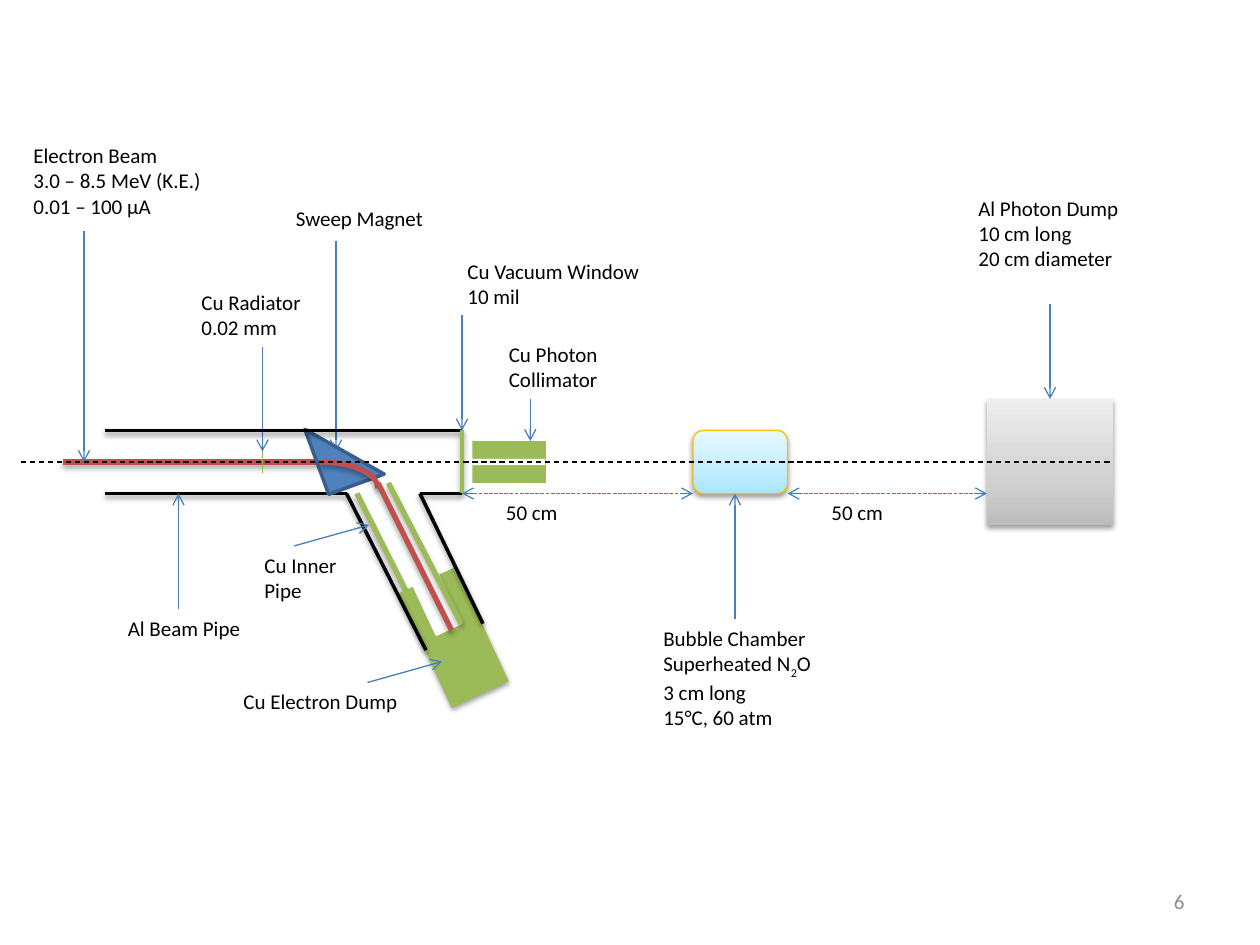
import pptx
import pptx.util
import pptx.dml.color
import pptx.enum.dml
import pptx.enum.shapes
import pptx.enum.text
import pptx.oxml
import pptx.oxml.ns
from lxml import etree

Pt = pptx.util.Pt
qn = pptx.oxml.ns.qn
SHAPES = pptx.enum.shapes.MSO_SHAPE
DASHES = pptx.enum.dml.MSO_LINE
ALIGN = pptx.enum.text.PP_ALIGN
COLORS = {
    "black": "000000", "white": "FFFFFF", "gray": "8C8C8C", "arrow": "4B7EBC",
    "copper": "9BBB59", "radiator": "98B955", "beam": "C0504D",
    "magnet": "4F81BD", "magnet_edge": "3A5F8C", "chamber_edge": "FFC000",
}
CHAMBER_STOPS = ((0, "A7E6FF"), (35, "C1EDFF"), (100, "E7F8FF"))
DUMP_STOPS = ((0, "BDBDBD"), (35, "D1D1D1"), (100, "EEEEEE"))
# Shadow opacity and distance for thick lines and for everything else
HEAVY, LIGHT = (35, 1.8), (38, 1.6)


def rgb(name):
    return pptx.dml.color.RGBColor.from_string(COLORS[name])


def set_shadow(shape, shadow):
    """Add an effect list, empty unless a downward shadow is asked for."""
    effects = etree.SubElement(shape._element.spPr, qn("a:effectLst"))
    if shadow:
        opacity, distance = shadow
        outer = etree.SubElement(
            effects, qn("a:outerShdw"), blurRad=str(Pt(3.1)),
            dist=str(Pt(distance)), dir="5400000", rotWithShape="0")
        color = etree.SubElement(outer, qn("a:srgbClr"), val=COLORS["black"])
        etree.SubElement(color, qn("a:alpha"), val=str(opacity * 1000))


def add_line(slide, box, start, end, color="black", width=2, dash=None,
             arrows=(), shadow=None):
    left, top = box[:2]
    line = slide.shapes.add_connector(
        pptx.enum.shapes.MSO_CONNECTOR.STRAIGHT,
        Pt(left + start[0]), Pt(top + start[1]),
        Pt(left + end[0]), Pt(top + end[1]))
    line.line.color.rgb = rgb(color)
    line.line.width = Pt(width)
    if dash:
        line.line.dash_style = dash
    for tag in arrows:
        etree.SubElement(line.line._get_or_add_ln(), qn(tag), type="arrow")
    set_shadow(line, shadow)


def add_pointer(slide, box, start, end):
    add_line(slide, box, start, end, "arrow", 0.75, arrows=["a:tailEnd"])


def add_part(slide, box, kind, area, fill=None, stops=None, edge=None,
             edge_width=0.75, rotation=0, shadow=None):
    x, y, width, height = area
    shape = slide.shapes.add_shape(
        kind, Pt(box[0] + x), Pt(box[1] + y), Pt(width), Pt(height))
    shape.rotation = rotation
    if stops:
        shape.fill.gradient()
        shape.fill.gradient_angle = 90
        stop_list = shape._element.spPr.find(".//" + qn("a:gsLst"))
        stop_list.clear()
        for position, color in stops:
            stop = etree.SubElement(stop_list, qn("a:gs"), pos=str(position * 1000))
            etree.SubElement(stop, qn("a:srgbClr"), val=color)
    elif fill:
        shape.fill.solid()
        shape.fill.fore_color.rgb = rgb(fill)
    else:
        shape.fill.background()
    if edge:
        shape.line.color.rgb = rgb(edge)
        shape.line.width = Pt(edge_width)
    else:
        shape.line.fill.background()
    set_shadow(shape, shadow)


def add_text(slide, box, area, text, color="black", size=12, wrap=False,
             align=ALIGN.LEFT, anchor=pptx.enum.text.MSO_ANCHOR.TOP):
    """Add one paragraph per line; text between tildes is subscript."""
    x, y, width, height = area
    shape = slide.shapes.add_textbox(
        Pt(box[0] + x), Pt(box[1] + y), Pt(width), Pt(height))
    frame = shape.text_frame
    frame.word_wrap = wrap
    frame.vertical_anchor = anchor
    for index, content in enumerate(text.split("\n")):
        paragraph = frame.add_paragraph() if index else frame.paragraphs[0]
        paragraph.alignment = align
        for part, words in enumerate(content.split("~")):
            run = paragraph.add_run()
            run.text = words
            run.font.name = "Calibri"
            run.font.size = Pt(size)
            run.font.color.rgb = rgb(color)
            if part % 2:
                run.font._element.set("baseline", "-25000")


def draw_bubble_chamber(slide, box):
    width, height = box[2:]
    add_part(slide, box, SHAPES.FLOWCHART_ALTERNATE_PROCESS, (0, 0, width, height),
             stops=CHAMBER_STOPS, edge="chamber_edge", shadow=LIGHT)
    add_pointer(slide, box, (24, 108), (24, height))
    add_text(slide, box, (-24, 108, 100, 65.5),
             "Bubble Chamber\nSuperheated N~2~O\n3 cm long\n15°C, 60 atm")


def draw_photon_dump(slide, box):
    width, height = box[2:]
    add_part(slide, box, SHAPES.RECTANGLE, (0, 0, width, height),
             stops=DUMP_STOPS, shadow=LIGHT)
    add_pointer(slide, box, (width / 2, -54), (width / 2, 0))
    add_text(slide, box, (-12, -120, 96, 51),
             "Al Photon Dump\n10 cm long\n20 cm diameter")


def draw_beam_pipe(slide, box):
    height = box[3]
    axis = height / 2
    # Lower wall, beam and radiator foil
    add_line(slide, box, (0, height), (138, height), shadow=LIGHT)
    add_line(slide, box, (-24, axis), (129, axis), "beam", 3, shadow=HEAVY)
    add_line(slide, box, (90, axis - 6), (90, axis + 6), "radiator", 0.75)
    # Labels
    add_pointer(slide, box, (-12, -114), (-12, axis))
    add_text(slide, box, (-48, -168, 111.6, 51),
             "Electron Beam\n3.0 – 8.5 MeV (K.E.)\n0.01 – 100 µA")
    add_pointer(slide, box, (90, -48), (90, axis - 6))
    add_text(slide, box, (48, -84, 74, 36), "Cu Radiator\n0.02 mm")
    add_pointer(slide, box, (42, 102), (42, height))
    add_text(slide, box, (6, 102, 79, 21.6), "Al Beam Pipe")


def draw_sweep_magnet(slide, box):
    width, height = box[2:]
    add_pointer(slide, box, (42, -126), (42, -6))
    add_text(slide, box, (12, -150, 88, 21.6), "Sweep Magnet")
    add_part(slide, box, SHAPES.RIGHT_TRIANGLE, (30, -25.7, 33.8, 39.6),
             fill="magnet", edge="magnet_edge", edge_width=2, rotation=-20.1)
    add_part(slide, box, SHAPES.ARC, (0, 0, width, height),
             edge="beam", edge_width=3, shadow=HEAVY)


def draw_pipe_exit(slide, box):
    width, height = box[2:]
    add_line(slide, box, (-180, 0), (width, 0), shadow=LIGHT)
    add_line(slide, box, (0, height), (width, height), shadow=LIGHT)
    add_line(slide, box, (width, 0), (width, height), "copper", shadow=LIGHT)
    add_pointer(slide, box, (width, -66), (width, 0))
    add_text(slide, box, (20, -102, 120, 36), "Cu Vacuum Window 10 mil", wrap=True)


def draw_dump_branch(slide, box):
    # Inner pipe and dump block, with the pipe bore cut into it
    add_line(slide, box, (6, 0), (51, 89.5), "copper", 3, shadow=HEAVY)
    add_part(slide, box, SHAPES.RECTANGLE, (25.2, 64.3, 72, 36),
             fill="copper", rotation=65, shadow=LIGHT)
    add_line(slide, box, (0, 0), (45.4, 89.5), shadow=LIGHT)
    add_line(slide, box, (42, 0), (78, 74.4), shadow=LIGHT)
    add_part(slide, box, SHAPES.RECTANGLE, (33, 53.5, 36, 16.6),
             fill="white", rotation=65)
    add_line(slide, box, (24, -6), (65.5, 74.4), "copper", 3, shadow=HEAVY)
    add_line(slide, box, (60, 78), (18, -6), "beam", 3, shadow=HEAVY)
    # Labels
    add_pointer(slide, box, (-30, 30), (13, 18))
    add_text(slide, box, (-54, 30, 59, 36), "Cu Inner\nPipe")
    add_pointer(slide, box, (12, 108), (54.7, 96))
    add_text(slide, box, (-66, 108, 106, 21.6), "Cu Electron Dump")


def draw_collimator(slide, box):
    width, height = box[2:]
    add_part(slide, box, SHAPES.RECTANGLE, (0, 0, width, height), fill="copper")
    add_part(slide, box, SHAPES.RECTANGLE, (-0.5, 10.2, width, 3.6), fill="white")
    add_pointer(slide, box, (33, -24), (33, 0))
    add_text(slide, box, (13.7, -60.5, 72, 36), "Cu Photon\nCollimator", wrap=True)


def draw_distance(slide, box):
    add_line(slide, box, (0, 0), (box[2], 0), "arrow", 0.75,
             dash=DASHES.SQUARE_DOT, arrows=["a:headEnd", "a:tailEnd"])
    add_text(slide, box, (18, 0, 44.6, 21.6), "50 cm")


def main():
    presentation = pptx.Presentation()
    presentation.slide_width, presentation.slide_height = Pt(720), Pt(540)
    slide = presentation.slides.add_slide(presentation.slide_layouts[6])
    draw_bubble_chamber(slide, (396, 246, 54, 36))
    draw_photon_dump(slide, (564, 228, 72, 72))
    draw_beam_pipe(slide, (60, 246, 204, 36))
    draw_sweep_magnet(slide, (150, 264, 66, 30))
    draw_pipe_exit(slide, (240, 246, 24, 36))
    draw_dump_branch(slide, (198, 282, 78, 120))
    draw_collimator(slide, (270, 252, 42, 24))
    for left, width in ((264, 132), (450, 114)):
        draw_distance(slide, (left, 282, width, 21.6))
    # Beam axis and slide number
    add_line(slide, (12, 264), (0, 0), (624, 0), width=0.75, dash=DASHES.DASH)
    add_text(slide, (516, 500.5), (0, 0, 168, 28.8), "6", color="gray", wrap=True,
             align=ALIGN.RIGHT, anchor=pptx.enum.text.MSO_ANCHOR.MIDDLE)
    presentation.save("out.pptx")


if __name__ == "__main__":
    main()
